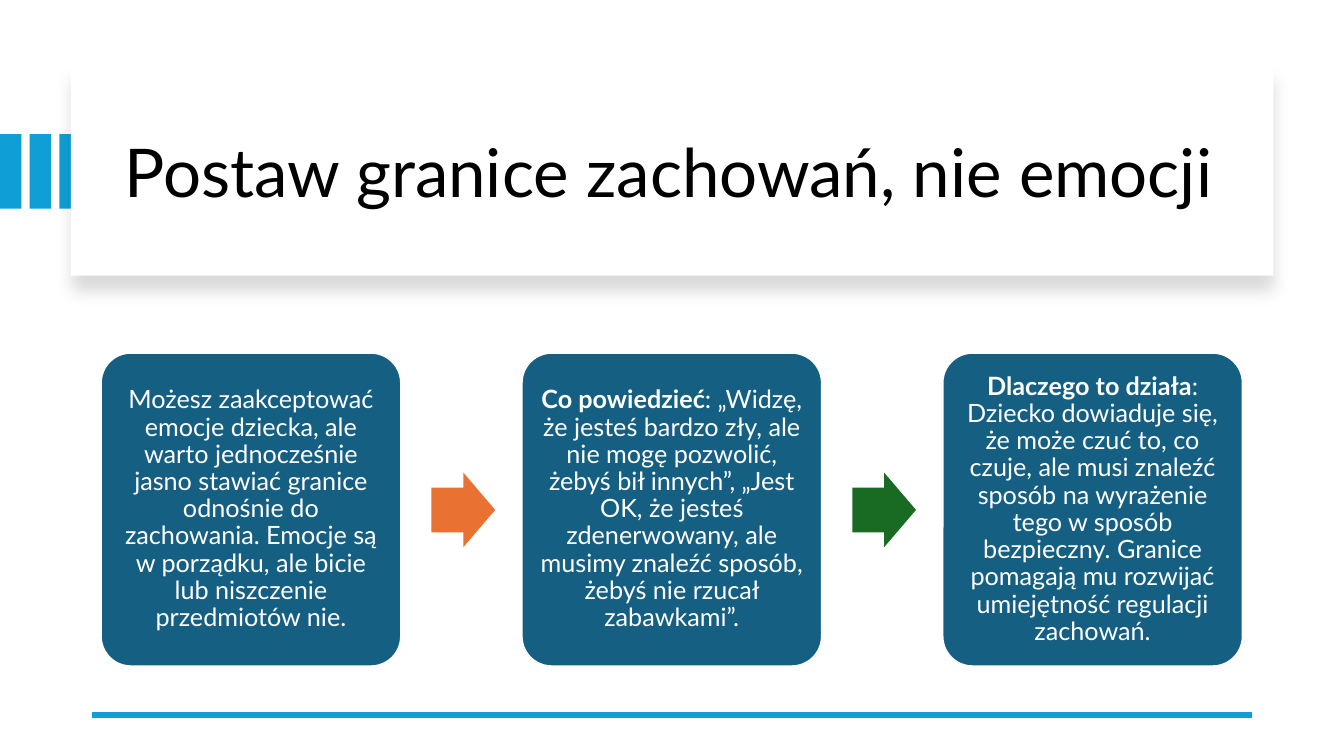
"""Build a slide on setting limits for behaviour, as three steps joined by arrows."""
from dataclasses import dataclass

import lxml.etree
import pptx
import pptx.dml.color
import pptx.enum.shapes
import pptx.enum.text
import pptx.oxml.ns
import pptx.shapes.autoshape
import pptx.slide
import pptx.text.text
import pptx.util

Pt = pptx.util.Pt
RGBColor = pptx.dml.color.RGBColor
Shape = pptx.shapes.autoshape.Shape
ShapeType = pptx.enum.shapes.MSO_SHAPE
qn = pptx.oxml.ns.qn

ACCENT = RGBColor(0x0F, 0x9E, 0xD5)
CARD_FILL = RGBColor(0x15, 0x60, 0x82)
ORANGE = RGBColor(0xE9, 0x71, 0x32)
GREEN = RGBColor(0x19, 0x6B, 0x24)
BLACK = RGBColor(0, 0, 0)
WHITE = RGBColor(0xFF, 0xFF, 0xFF)

FONT = "Lato"
BAR_PITCH = 21.2
STEP_PITCH = 300.6


@dataclass(frozen=True)
class Box:
    """A frame in points."""

    left: float
    top: float
    width: float
    height: float

    def moved(self, distance: float) -> "Box":
        """Return the frame shifted to the right."""
        return Box(self.left + distance, self.top, self.width, self.height)

    def lengths(self) -> list[pptx.util.Length]:
        """Return the frame as four lengths."""
        return [Pt(value) for value in (self.left, self.top, self.width, self.height)]


@dataclass(frozen=True)
class Step:
    """The wording of one card: a bold lead and the body after it."""

    lead: str
    body: str


BAR = Box(0, 95.8, 15.3, 53.3)
PANEL = Box(50.6, 48, 859, 149)
TITLE = Box(82, 64, 801.4, 122.4)
CARD = Box(72, 252, 214.5, 224)
ARROW = Box(308.2, 337.6, 45.5, 53.3)

STEPS = [
    Step("", "Możesz zaakceptować emocje dziecka, ale warto jednocześnie jasno "
         "stawiać granice odnośnie do zachowania. Emocje są w porządku, ale bicie "
         "lub niszczenie przedmiotów nie."),
    Step("Co powiedzieć", ": „Widzę, że jesteś bardzo zły, ale nie mogę pozwolić, "
         "żebyś bił innych”, „Jest OK, że jesteś zdenerwowany, ale musimy znaleźć "
         "sposób, żebyś nie rzucał zabawkami”."),
    Step("Dlaczego to działa", ": Dziecko dowiaduje się, że może czuć to, co czuje, "
         "ale musi znaleźć sposób na wyrażenie tego w sposób bezpieczny. Granice "
         "pomagają mu rozwijać umiejętność regulacji zachowań."),
]
ARROW_COLORS = [ORANGE, GREEN]


def add_filled_shape(slide: pptx.slide.Slide, kind: ShapeType, box: Box,
                     color: RGBColor) -> Shape:
    """Add a flat shape without an outline."""
    shape = slide.shapes.add_shape(kind, *box.lengths())
    shape.shadow.inherit = False
    shape.fill.solid()
    shape.fill.fore_color.rgb = color
    shape.line.fill.background()
    return shape


def format_run(run: pptx.text.text._Run, size: float, color: RGBColor,
               bold: bool = False) -> None:
    """Set the font of a run."""
    run.font.name = FONT
    run.font.size = Pt(size)
    run.font.bold = bold
    run.font.color.rgb = color


def add_panel(slide: pptx.slide.Slide) -> None:
    """Add the white title panel with its soft shadow below."""
    panel = add_filled_shape(slide, ShapeType.RECTANGLE, PANEL, WHITE)
    effects = panel._element.spPr.find(qn("a:effectLst"))
    shadow = lxml.etree.SubElement(
        effects, qn("a:outerShdw"), blurRad=str(Pt(11)), dist=str(Pt(10)),
        dir="5400000", algn="t", rotWithShape="0")
    color = lxml.etree.SubElement(shadow, qn("a:srgbClr"), val=str(BLACK))
    lxml.etree.SubElement(color, qn("a:alpha"), val="15000")


def add_title(slide: pptx.slide.Slide) -> None:
    """Add the title text."""
    text_frame = slide.shapes.add_textbox(*TITLE.lengths()).text_frame
    text_frame.word_wrap = True
    text_frame.vertical_anchor = pptx.enum.text.MSO_ANCHOR.MIDDLE
    text_frame.text = "Postaw granice zachowań, nie emocji"
    paragraph = text_frame.paragraphs[0]
    paragraph.line_spacing = 0.9
    format_run(paragraph.runs[0], 48, BLACK)


def add_rule(slide: pptx.slide.Slide) -> None:
    """Add the line along the bottom of the slide."""
    rule = slide.shapes.add_connector(
        pptx.enum.shapes.MSO_CONNECTOR.STRAIGHT,
        Pt(894), Pt(510.5), Pt(66), Pt(510.5))
    rule.line.color.rgb = ACCENT
    rule.line.width = Pt(4.5)
    lxml.etree.SubElement(rule._element.spPr, qn("a:effectLst"))


def add_card(slide: pptx.slide.Slide, box: Box, step: Step) -> None:
    """Add a rounded card with its centred wording."""
    card = add_filled_shape(slide, ShapeType.ROUNDED_RECTANGLE, box, CARD_FILL)
    card.adjustments[0] = 0.1
    card.line.color.rgb = WHITE
    card.line.width = Pt(1.5)
    text_frame = card.text_frame
    text_frame.word_wrap = True
    text_frame.vertical_anchor = pptx.enum.text.MSO_ANCHOR.MIDDLE
    text_frame.margin_left = text_frame.margin_right = Pt(5)
    text_frame.margin_top = text_frame.margin_bottom = Pt(5)
    paragraph = text_frame.paragraphs[0]
    paragraph.alignment = pptx.enum.text.PP_ALIGN.CENTER
    paragraph.line_spacing = 0.9
    for wording, bold in ((step.lead, True), (step.body, False)):
        if wording:
            run = paragraph.add_run()
            run.text = wording
            format_run(run, 18, WHITE, bold)


def add_arrow(slide: pptx.slide.Slide, box: Box, color: RGBColor) -> None:
    """Add a block arrow between two cards."""
    arrow = add_filled_shape(slide, ShapeType.RIGHT_ARROW, box, color)
    arrow.adjustments[0] = 0.6
    arrow.adjustments[1] = 0.5


def main() -> None:
    """Build and save the presentation."""
    presentation = pptx.Presentation()
    presentation.slide_width = Pt(960)
    presentation.slide_height = Pt(540)
    slide = presentation.slides.add_slide(presentation.slide_layouts[6])
    for index in range(3):
        add_filled_shape(slide, ShapeType.RECTANGLE, BAR.moved(index * BAR_PITCH), ACCENT)
    add_panel(slide)
    add_title(slide)
    add_rule(slide)
    for index, step in enumerate(STEPS):
        add_card(slide, CARD.moved(index * STEP_PITCH), step)
    for index, color in enumerate(ARROW_COLORS):
        add_arrow(slide, ARROW.moved(index * STEP_PITCH), color)
    presentation.save("out.pptx")


if __name__ == "__main__":
    main()
